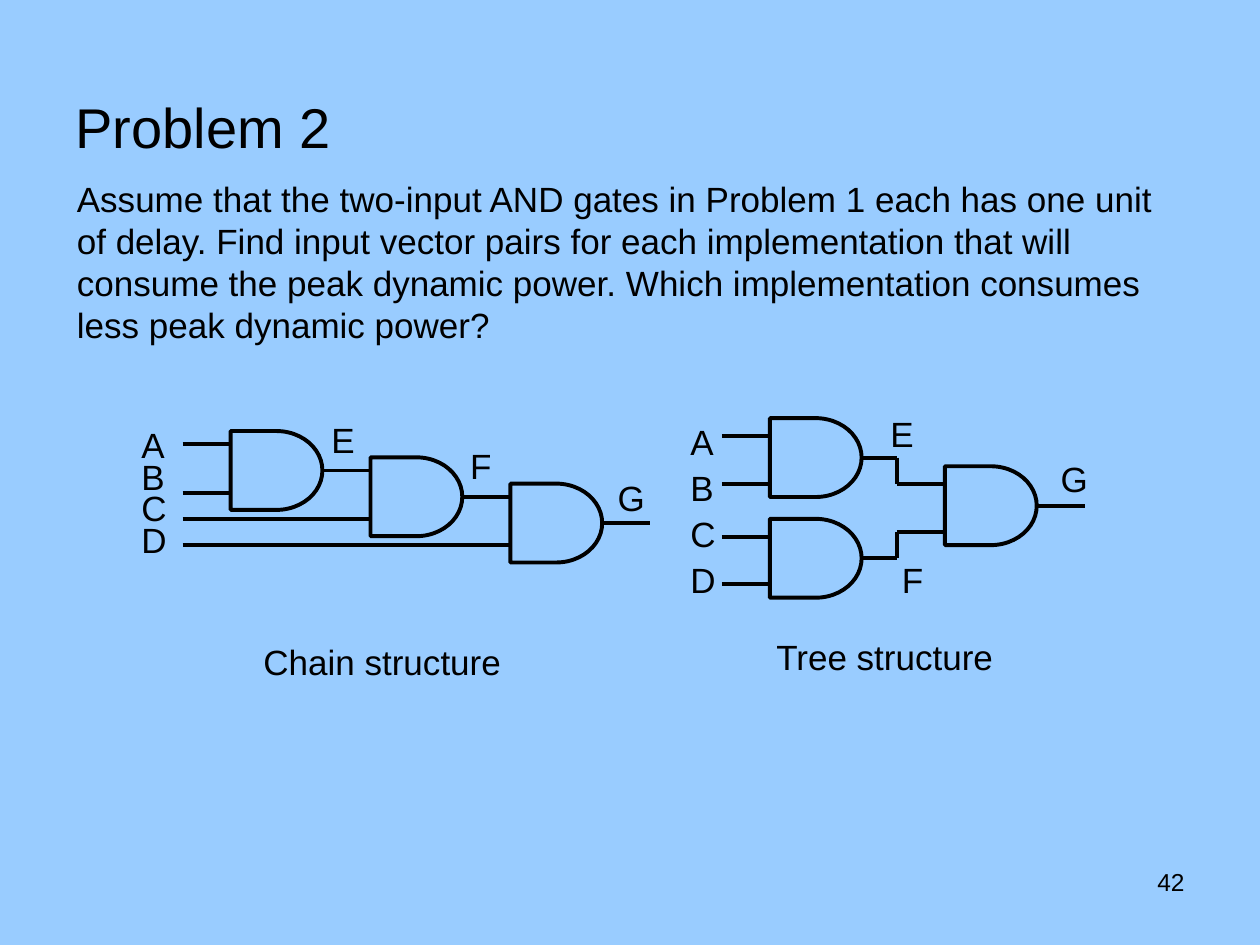
from lxml.etree import SubElement
from pptx import Presentation
from pptx.dml.color import RGBColor
from pptx.enum.shapes import MSO_CONNECTOR, MSO_SHAPE
from pptx.enum.text import MSO_ANCHOR, PP_ALIGN
from pptx.oxml.ns import qn
from pptx.util import Cm, Pt

BLACK = "000000"
BACKGROUND = "99CCFF"
LINE_WIDTH = Pt(2.25)
GATE_WIDTH, GATE_HEIGHT = 1.85, 1.59
STUB = 0.97
TIGHT = (0.18, 0.08)
ROOMY = (0.25, 0.13)


def set_color(color_format, value):
    color_format.rgb = RGBColor.from_string(value)


def write_text(frame, text, size=20, align=PP_ALIGN.LEFT, anchor=MSO_ANCHOR.TOP,
               insets=ROOMY, line_spacing=None):
    frame.word_wrap = True
    frame.vertical_anchor = anchor
    frame.margin_left = frame.margin_right = Cm(insets[0])
    frame.margin_top = frame.margin_bottom = Cm(insets[1])
    frame.text = text
    for paragraph in frame.paragraphs:
        paragraph.alignment = align
        paragraph.line_spacing = line_spacing
        paragraph.font.name = "Arial"
        paragraph.font.size = Pt(size)
        set_color(paragraph.font.color, BLACK)


def add_text(slide, text, left, top, width, height, **text_format):
    box = slide.shapes.add_textbox(Cm(left), Cm(top), Cm(width), Cm(height))
    write_text(box.text_frame, text, **text_format)


def add_gate(slide, left, top):
    gate = slide.shapes.add_shape(MSO_SHAPE.FLOWCHART_DELAY, Cm(left), Cm(top),
                                  Cm(GATE_WIDTH), Cm(GATE_HEIGHT))
    gate.shadow.inherit = False
    gate.fill.background()
    set_color(gate.line.color, BLACK)
    gate.line.width = LINE_WIDTH


def add_wire(slide, *points):
    """Join consecutive points with straight segments."""
    for (x1, y1), (x2, y2) in zip(points, points[1:]):
        wire = slide.shapes.add_connector(MSO_CONNECTOR.STRAIGHT,
                                          Cm(x1), Cm(y1), Cm(x2), Cm(y2))
        set_color(wire.line.color, BLACK)
        wire.line.width = LINE_WIDTH
        SubElement(wire._element.spPr, qn("a:effectLst"))


def add_chain(slide, left, top):
    """Each gate's output feeds the upper input of the next gate."""
    step_x, step_y = GATE_WIDTH + STUB, 0.53
    upper, lower = GATE_HEIGHT / 2 - step_y, 1.24
    input_x, first_x, first_y = left + 1.01, left + 1.98, top + 0.33

    add_wire(slide, (input_x, first_y + upper), (first_x, first_y + upper))
    for index in range(3):
        x, y = first_x + index * step_x, first_y + index * step_y
        add_gate(slide, x, y)
        add_wire(slide, (input_x, y + lower), (x, y + lower))
        output_x, output_y = x + GATE_WIDTH, y + GATE_HEIGHT / 2
        add_wire(slide, (output_x, output_y), (output_x + STUB, output_y))

    add_text(slide, "A\nB\nC\nD", left, top + 0.3, 0.74, 2.77,
             insets=TIGHT, line_spacing=0.75)
    for name, x, y in (("E", 3.83, 0), ("F", 6.63, 0.53), ("G", 9.6, 1.17)):
        add_text(slide, name, left + x, top + y, 0.79, 0.8, insets=TIGHT)
    add_text(slide, "Chain structure", left + 2.46, top + 4.47, 6.07, 0.86,
             insets=TIGHT)


def add_tree(slide, left, top):
    """Two input gates feed one output gate through bent wires."""
    inputs = (0.36, 1.32)
    first_x, last_x, last_y = left + 1.85, left + 5.38, top + 1.22
    elbow_x = last_x - STUB

    for y, last_input in zip((top + 0.25, top + 2.28), inputs):
        add_gate(slide, first_x, y)
        for offset in inputs:
            add_wire(slide, (first_x - STUB, y + offset), (first_x, y + offset))
        output_y, target_y = y + GATE_HEIGHT / 2, last_y + last_input
        add_wire(slide, (first_x + GATE_WIDTH, output_y), (elbow_x, output_y),
                 (elbow_x, target_y), (last_x, target_y))
    add_gate(slide, last_x, last_y)
    output_x, output_y = last_x + GATE_WIDTH, last_y + GATE_HEIGHT / 2
    add_wire(slide, (output_x, output_y), (output_x + STUB, output_y))

    add_text(slide, "A\nB\nC\nD", left, top + 0.08, 1.22, 3.99, line_spacing=1.1)
    for name, x, y in (("E", 4.03, 0), ("F", 4.26, 2.95), ("G", 7.46, 0.91)):
        add_text(slide, name, left + x, top + y, 0.94, 1.09)
    add_text(slide, "Tree structure", left + 1.8, top + 4.55, 5.18, 1.3,
             insets=TIGHT)


def add_heading(slide, left, top, width, height):
    title = slide.shapes.title
    title.left, title.top = Cm(left), Cm(top)
    title.width, title.height = Cm(width), Cm(height)
    write_text(title.text_frame, "Problem 2", size=32, anchor=MSO_ANCHOR.BOTTOM)


def main():
    presentation = Presentation()
    presentation.slide_width, presentation.slide_height = Cm(25.4), Cm(19.05)
    slide = presentation.slides.add_slide(presentation.slide_layouts[5])
    slide.background.fill.solid()
    set_color(slide.background.fill.fore_color, BACKGROUND)

    add_heading(slide, 1.27, 0.18, 22.86, 3.18)
    add_text(slide, "Assume that the two-input AND gates in Problem 1 each has one "
             "unit of delay. Find input vector pairs for each implementation that "
             "will consume the peak dynamic power. Which implementation consumes "
             "less peak dynamic power?", 1.3, 3.45, 22.61, 3.63)
    add_chain(slide, 2.67, 8.36)
    add_tree(slide, 13.67, 8.18)
    add_text(slide, "42", 18.21, 17.35, 5.92, 1.32, size=14, align=PP_ALIGN.RIGHT)
    presentation.save("out.pptx")


if __name__ == "__main__":
    main()
